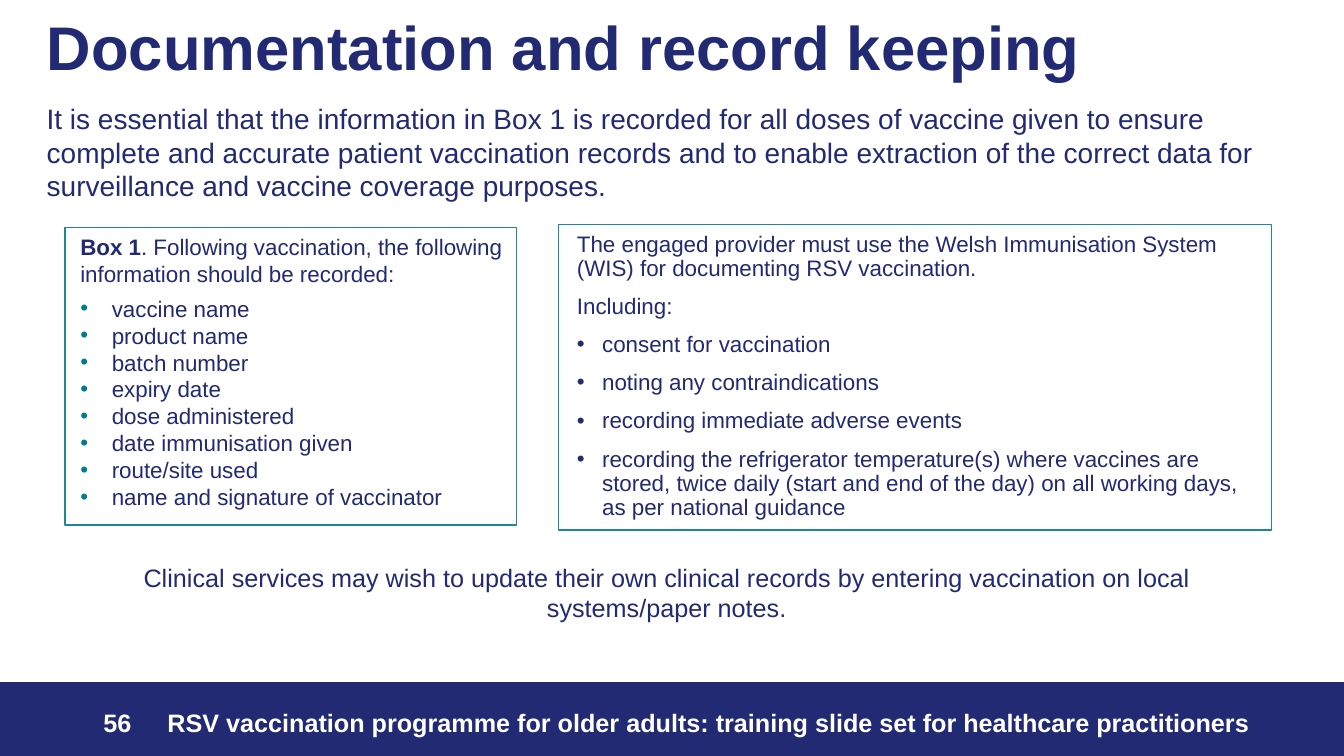
from lxml import etree
from pptx import Presentation
from pptx.dml.color import RGBColor
from pptx.enum.shapes import MSO_SHAPE as SHAPE
from pptx.enum.text import MSO_ANCHOR as ANCHOR, MSO_AUTO_SIZE as AUTO, PP_ALIGN as ALIGN
from pptx.oxml.ns import qn
from pptx.util import Emu, Pt

COLORS = {"navy": "212A73", "teal": "1E8898", "bullet": "007C91", "white": "FFFFFF"}
FONT = "Arial"
PX = 9525  # EMU in one px, 96 px to the inch


def px(n):
    return Emu(n * PX)


def rgb(name):
    return RGBColor.from_string(COLORS[name])


class Deck:
    def __init__(self, width, height):
        self.prs = Presentation()
        self.prs.slide_width, self.prs.slide_height = px(width), px(height)
        self.s = self.prs.slides.add_slide(self.prs.slide_layouts[5])

    def style(self, p, size, color="navy", bold=False):
        for r in p.runs:
            r.font.name, r.font.size, r.font.bold = FONT, Pt(size), bold
            r.font.color.rgb = rgb(color)

    def title(self, text, x, y, w, h, size):
        sp = self.s.shapes.title
        sp.left, sp.top, sp.width, sp.height = map(px, (x, y, w, h))
        tf = sp.text_frame
        tf.text = text
        tf.word_wrap, tf.auto_size = True, AUTO.NONE
        tf.vertical_anchor = ANCHOR.TOP
        p = tf.paragraphs[0]
        p.alignment, p.line_spacing = ALIGN.LEFT, 0.9
        self.style(p, size, bold=True)

    def rect(self, x, y, w, h, line, fill=None):
        sp = self.s.shapes.add_shape(SHAPE.RECTANGLE, *map(px, (x, y, w, h)))
        sp.shadow.inherit = False
        if fill:
            sp.fill.solid()
            sp.fill.fore_color.rgb = rgb(fill)
        else:
            sp.fill.background()
        sp.line.color.rgb, sp.line.width = rgb(line), Pt(1)

    def text(self, lines, x, y, w, h, size, color="navy", bold=False,
             align=ALIGN.LEFT, spacing=None, before=0):
        """Add a text box with one paragraph per line and return its paragraphs."""
        tf = self.s.shapes.add_textbox(*map(px, (x, y, w, h))).text_frame
        tf.text = "\n".join(lines)
        tf.word_wrap = True
        for p in tf.paragraphs:
            p.alignment, p.line_spacing, p.space_before = align, spacing, Pt(before)
            self.style(p, size, color, bold)
        return tf.paragraphs

    def bullets(self, paragraphs, indent, color):
        for p in paragraphs:
            pPr = p._p.get_or_add_pPr()
            pPr.set("marL", str(px(indent)))
            pPr.set("indent", str(-px(indent)))
            clr = etree.SubElement(pPr, qn("a:buClr"))
            etree.SubElement(clr, qn("a:srgbClr"), val=COLORS[color])
            etree.SubElement(pPr, qn("a:buFont"), typeface=FONT)
            etree.SubElement(pPr, qn("a:buChar"), char="•")


def main():
    deck = Deck(1280, 720)

    # Title and introduction
    deck.title("Documentation and record keeping", 35, 12, 1104, 102, 44)
    deck.text(["It is essential that the information in Box 1 is recorded for all doses of "
               "vaccine given to ensure complete and accurate patient vaccination records and "
               "to enable extraction of the correct data for surveillance and vaccine "
               "coverage purposes."], 35, 92, 1211, 139, 20)

    # Box 1: information to record
    deck.rect(62, 217, 430, 283, "teal")
    record = deck.text(["Box 1", "vaccine name", "product name", "batch number",
                        "expiry date", "dose administered", "date immunisation given",
                        "route/site used", "name and signature of vaccinator"],
                       67, 217, 426, 305, 16)
    heading, items = record[0], record[1:]
    heading.add_run().text = (". Following vaccination, the following information "
                              "should be recorded:")
    deck.style(heading, 16)
    heading.runs[0].font.bold = True
    items[0].space_before = Pt(6)
    deck.bullets(items, 30, "bullet")

    # Provider duties
    deck.rect(532, 214, 679, 291, "teal")
    duties = deck.text(["The engaged provider must use the Welsh Immunisation System (WIS) "
                        "for documenting RSV vaccination.",
                        "Including:", "consent for vaccination",
                        "noting any contraindications", "recording immediate adverse events",
                        "recording the refrigerator temperature(s) where vaccines are stored, "
                        "twice daily (start and end of the day) on all working days, as per "
                        "national guidance"],
                       540, 217, 660, 341, 16, spacing=0.9, before=10)
    deck.bullets(duties[2:], 24, "navy")

    # Closing remark
    deck.text(["Clinical services may wish to update their own clinical records by entering "
               "vaccination on local systems/paper notes."],
              61, 531, 1148, 68, 18, align=ALIGN.CENTER)

    # Footer bar with slide number
    deck.rect(0, 650, 1280, 70, "navy", fill="navy")
    for label, x, w in (("56", 89, 60),
                        ("RSV vaccination programme for older adults: training slide set "
                         "for healthcare practitioners", 150, 1061)):
        deck.text([label], x, 669, w, 38, 18, "white", bold=True)

    deck.prs.save("out.pptx")


if __name__ == "__main__":
    main()
